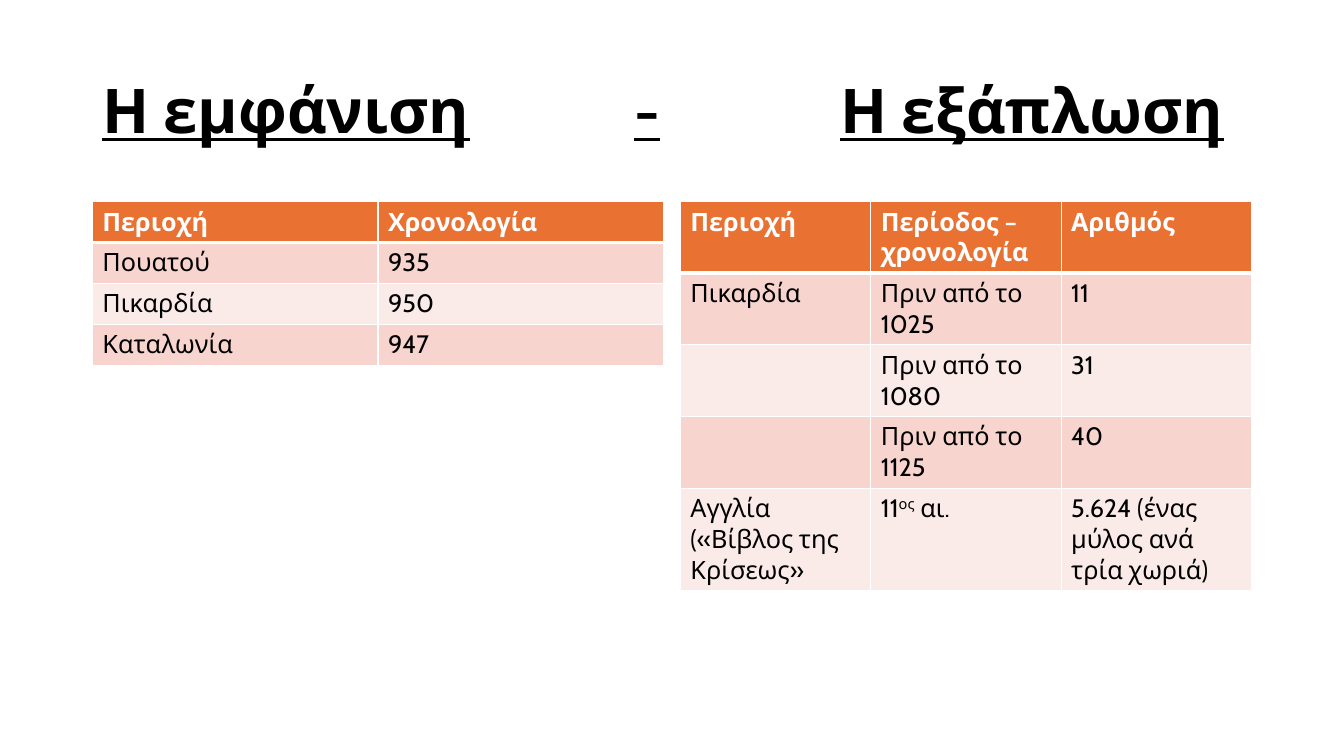
import pptx
import pptx.dml.color
import pptx.enum.text
import pptx.oxml.ns
import pptx.util
from dataclasses import dataclass
from lxml import etree

Pt = pptx.util.Pt


@dataclass(frozen=True)
class Theme:
    font: str = "Cabin"
    title_size: int = 44
    table_size: int = 18
    dark: str = "000000"
    light: str = "FFFFFF"
    header: str = "E97132"
    bands: tuple = ("F7D5CE", "FBEBE8")
    line: float = 1
    header_line: float = 3


def rgb(code):
    return pptx.dml.color.RGBColor.from_string(code)


def sub(parent, tag, **attrs):
    return etree.SubElement(parent, pptx.oxml.ns.qn(tag), **attrs)


class Deck:
    def __init__(self, theme):
        self.theme = theme
        self.prs = pptx.Presentation()
        self.prs.slide_width, self.prs.slide_height = Pt(960), Pt(540)
        self.s = self.prs.slides.add_slide(self.prs.slide_layouts[5])

    def run(self, p, text, size, color, bold=False):
        r = p.add_run()
        r.text = text
        r.font.name, r.font.size, r.font.bold = self.theme.font, Pt(size), bold
        r.font.color.rgb = rgb(color)
        return r

    def title(self, parts, stops, x, y, w, h):
        """Place underlined title parts, each after the first at its own tab stop."""
        sp = self.s.shapes.title
        sp.left, sp.top, sp.width, sp.height = Pt(x), Pt(y), Pt(w), Pt(h)
        tf = sp.text_frame
        tf.word_wrap = True
        tf.auto_size = pptx.enum.text.MSO_AUTO_SIZE.NONE
        tf.vertical_anchor = pptx.enum.text.MSO_ANCHOR.MIDDLE
        p = tf.paragraphs[0]
        p.alignment = pptx.enum.text.PP_ALIGN.LEFT
        p.line_spacing = 0.9
        tabs = sub(p._p.get_or_add_pPr(), "a:tabLst")
        for stop in stops:
            sub(tabs, "a:tab", pos=str(Pt(stop)), algn="l")
        r = self.run(p, "\t".join(parts), self.theme.title_size, self.theme.dark, True)
        r.font.underline = True

    def borders(self, cell, top, bottom):
        side = self.theme.line
        tcPr = cell._tc.get_or_add_tcPr()
        for tag, width in (("a:lnL", side), ("a:lnR", side), ("a:lnT", top), ("a:lnB", bottom)):
            ln = sub(tcPr, tag, w=str(Pt(width)))
            sub(sub(ln, "a:solidFill"), "a:srgbClr", val=self.theme.light)

    def cell(self, cell, text, row):
        """Fill one cell; text between carets is superscript."""
        t = self.theme
        is_header = row == 0
        self.borders(cell, t.header_line if row == 1 else t.line,
                     t.header_line if is_header else t.line)
        cell.fill.solid()
        cell.fill.fore_color.rgb = rgb(t.header if is_header else t.bands[(row - 1) % 2])
        p = cell.text_frame.paragraphs[0]
        p.font.size = Pt(t.table_size)
        for i, part in enumerate(text.split("^") if text else []):
            r = self.run(p, part, t.table_size, t.light if is_header else t.dark, is_header)
            if i % 2:
                r._r.get_or_add_rPr().set("baseline", "30000")

    def table(self, rows, x, y, w, row_h):
        n_cols = len(rows[0])
        table = self.s.shapes.add_table(
            len(rows), n_cols, Pt(x), Pt(y), Pt(w), Pt(row_h * len(rows))).table
        for column in table.columns:
            column.width = Pt(w / n_cols)
        for i, row in enumerate(rows):
            for j, text in enumerate(row):
                self.cell(table.cell(i, j), text, i)


APPEARANCE = [
    ("Περιοχή", "Χρονολογία"),
    ("Πουατού", "935"),
    ("Πικαρδία", "950"),
    ("Καταλωνία", "947"),
]
SPREAD = [
    ("Περιοχή", "Περίοδος – χρονολογία", "Αριθμός"),
    ("Πικαρδία", "Πριν από το 1025", "11"),
    ("", "Πριν από το 1080", "31"),
    ("", "Πριν από το 1125", "40"),
    ("Αγγλία («Βίβλος της Κρίσεως»", "11^ος^ αι.", "5.624 (ένας μύλος ανά τρία χωριά)"),
]


def main():
    deck = Deck(Theme())
    left, top, width, gap, row_h = 66, 144, 408, 12, 29.2
    deck.title(("Η εμφάνιση", "-", "Η εξάπλωση"), (380, 527), left, 28.75, 2 * width + gap, 104.4)
    for i, rows in enumerate((APPEARANCE, SPREAD)):
        deck.table(rows, left + i * (width + gap), top, width, row_h)
    deck.prs.save("out.pptx")


if __name__ == "__main__":
    main()
